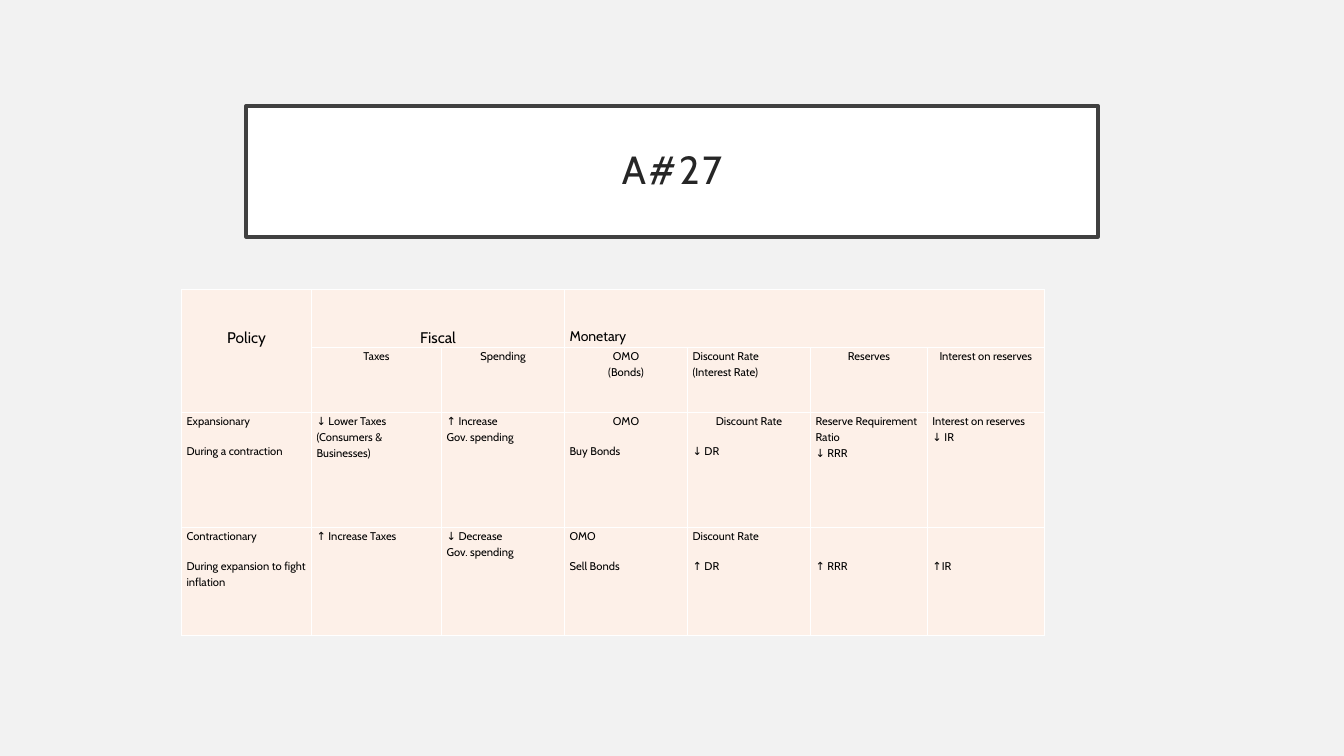
from lxml import etree
from pptx import Presentation
from pptx.dml.color import RGBColor
from pptx.enum.text import MSO_ANCHOR, MSO_AUTO_SIZE, PP_ALIGN
from pptx.oxml.ns import qn
from pptx.util import Inches, Pt

BACKGROUND = RGBColor(0xF2, 0xF2, 0xF2)
WHITE = RGBColor(0xFF, 0xFF, 0xFF)
FRAME = RGBColor(0x40, 0x40, 0x40)
TITLE_TEXT = RGBColor(0x26, 0x26, 0x26)
CELL_FILL = RGBColor(0xFD, 0xF0, 0xE8)
BLACK = RGBColor(0, 0, 0)
LEFT, CENTER = PP_ALIGN.LEFT, PP_ALIGN.CENTER
MIDDLE, TOP = MSO_ANCHOR.MIDDLE, MSO_ANCHOR.TOP
NO_AUTOFIT = MSO_AUTO_SIZE.NONE
FONT = "Cabin"

COLUMN_WIDTHS = [1.29, 1.29, 1.22, 1.22, 1.22, 1.16, 1.16]
ROW_HEIGHTS = [0.56, 0.65, 1.14, 1.07]
MERGES = [(0, 0, 1, 0), (0, 1, 0, 2), (0, 3, 0, 6)]
GROUPS = [(0, "Policy", 11, CENTER), (1, "Fiscal", 11, CENTER), (3, "Monetary", 10, LEFT)]
GROUP_DROP, RATIO_DROP = 0.36, 0.3

# Each entry: lines, space after in points, alignment of the first line
HEADINGS = [
    (["Taxes"], 0, CENTER),
    (["Spending"], 0, CENTER),
    (["OMO", "(Bonds)"], 0, CENTER),
    (["Discount Rate", "(Interest Rate)"], 0, LEFT),
    (["Reserves"], 0, CENTER),
    (["Interest on reserves"], 0, CENTER),
]
EXPANSIONARY = [
    (["Expansionary", "During a contraction"], 10, LEFT),
    (["↓ Lower Taxes", "(Consumers & Businesses)"], 0, LEFT),
    (["↑ Increase", "Gov. spending"], 0, LEFT),
    (["OMO", "Buy Bonds"], 10, CENTER),
    (["Discount Rate", "↓ DR"], 10, CENTER),
    (["Reserve Requirement Ratio", "↓ RRR"], 0, LEFT),
    (["Interest on reserves", "↓ IR"], 0, LEFT),
]
CONTRACTIONARY = [
    (["Contractionary", "During expansion to fight inflation"], 10, LEFT),
    (["↑ Increase Taxes"], 0, LEFT),
    (["↓ Decrease", "Gov. spending"], 0, LEFT),
    (["OMO", "Sell Bonds"], 10, LEFT),
    (["Discount Rate", "↑ DR"], 10, LEFT),
    (["↑ RRR"], 0, LEFT),
    (["↑IR"], 0, LEFT),
]


def add_run(p, text, size, color):
    """Add one run in the slide font and return it."""
    r = p.add_run()
    r.text = text
    r.font.name = FONT
    r.font.size = Pt(size)
    r.font.color.rgb = color
    return r


def place_title(s, left, top, width, height):
    """Place the framed title in the given box."""
    sp = s.shapes.title
    sp.left, sp.top = Inches(left), Inches(top)
    sp.width, sp.height = Inches(width), Inches(height)
    sp.fill.solid()
    sp.fill.fore_color.rgb = WHITE
    sp.line.color.rgb = FRAME
    sp.line.width = Pt(2.5)
    tf = sp.text_frame
    tf.word_wrap = True
    tf.auto_size = NO_AUTOFIT
    tf.vertical_anchor = MIDDLE
    tf.margin_left = tf.margin_right = tf.margin_top = tf.margin_bottom = Inches(0.2)
    p = tf.paragraphs[0]
    p.alignment = CENTER
    p.line_spacing = 0.9
    r = add_run(p, "A#27", 28, TITLE_TEXT)
    r.font._element.set("spc", "200")


def style_cell(cell):
    """Give a cell its white borders, fill and margins."""
    tcPr = cell._tc.get_or_add_tcPr()
    for side in ("a:lnL", "a:lnR", "a:lnT", "a:lnB"):
        ln = etree.SubElement(tcPr, qn(side), w=str(Pt(1)))
        fill = etree.SubElement(ln, qn("a:solidFill"))
        etree.SubElement(fill, qn("a:srgbClr"), val=str(WHITE))
    cell.fill.solid()
    cell.fill.fore_color.rgb = CELL_FILL
    cell.vertical_anchor = TOP
    cell.margin_left = cell.margin_right = Inches(0.05)
    cell.margin_top = cell.margin_bottom = 0


def write_cell(cell, lines, after, first_align, rest_align=LEFT, size=8, drop=0):
    """Write one paragraph per line, starting at a drop below the cell top."""
    cell.margin_top = Inches(drop)
    tf = cell.text_frame
    for i, line in enumerate(lines):
        p = tf.add_paragraph() if i else tf.paragraphs[0]
        p.alignment = rest_align if i else first_align
        p.line_spacing = 1.15
        p.space_after = Pt(after)
        add_run(p, line, size, BLACK)


def add_policy_table(s, left, top):
    """Add the policy table with its top left corner at the given point."""
    frame = s.shapes.add_table(
        len(ROW_HEIGHTS), len(COLUMN_WIDTHS), Inches(left), Inches(top),
        Inches(sum(COLUMN_WIDTHS)), Inches(sum(ROW_HEIGHTS)))
    table = frame.table
    table.first_row = table.horz_banding = False
    for column, width in zip(table.columns, COLUMN_WIDTHS):
        column.width = Inches(width)
    for row, height in zip(table.rows, ROW_HEIGHTS):
        row.height = Inches(height)
    for cell in table.iter_cells():
        style_cell(cell)
    for r1, c1, r2, c2 in MERGES:
        table.cell(r1, c1).merge(table.cell(r2, c2))
    for col, label, size, align in GROUPS:
        write_cell(table.cell(0, col), [label], 0, align, size=size, drop=GROUP_DROP)
    for col, (lines, after, align) in enumerate(HEADINGS, 1):
        write_cell(table.cell(1, col), lines, after, align, rest_align=align)
    for row, entries in enumerate((EXPANSIONARY, CONTRACTIONARY), 2):
        for col, (lines, after, align) in enumerate(entries):
            drop = RATIO_DROP if row == 3 and col >= 5 else 0
            write_cell(table.cell(row, col), lines, after, align, drop=drop)


def main():
    """Build the slide and save it."""
    prs = Presentation()
    prs.slide_width, prs.slide_height = Inches(13.33), Inches(7.5)
    s = prs.slides.add_slide(prs.slide_layouts[5])
    s.background.fill.solid()
    s.background.fill.fore_color.rgb = BACKGROUND
    place_title(s, 2.44, 1.05, 8.45, 1.3)
    add_policy_table(s, 1.8, 2.87)
    prs.save("out.pptx")


if __name__ == "__main__":
    main()
